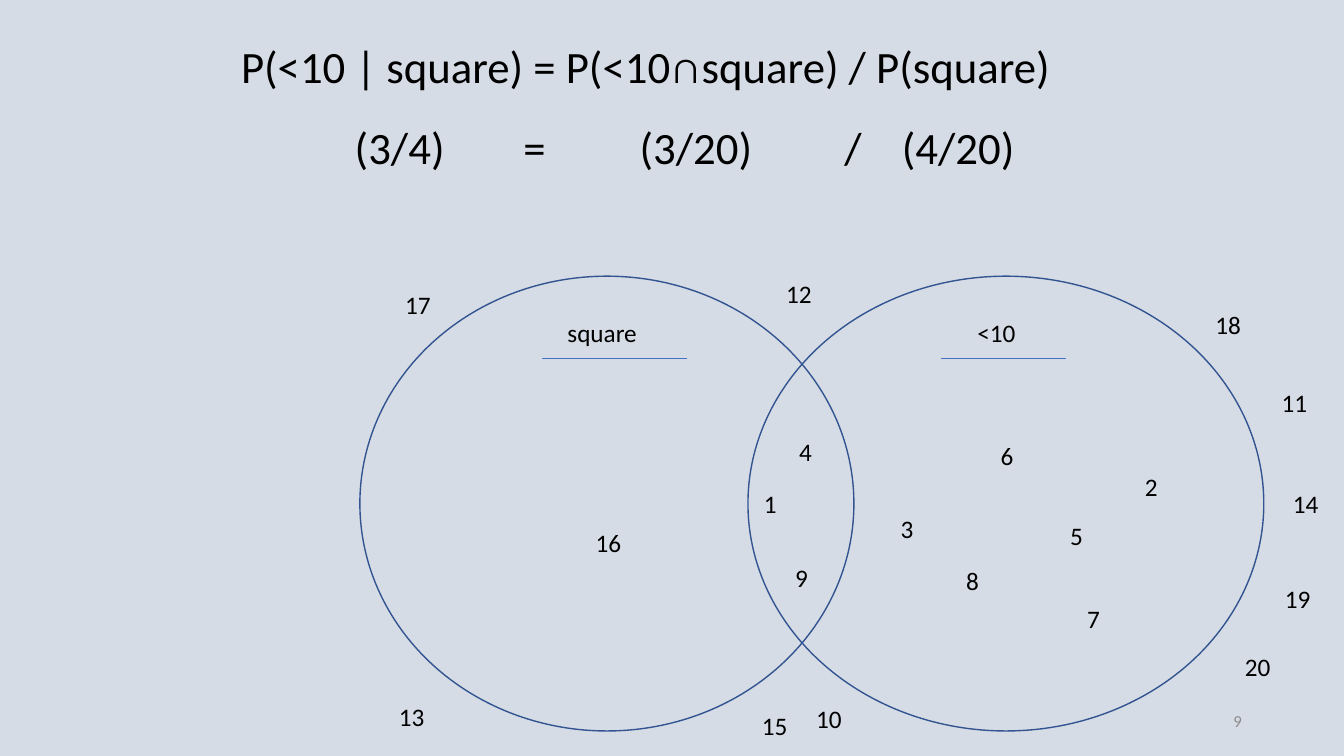
from dataclasses import dataclass

from lxml.etree import SubElement
from pptx import Presentation
from pptx.dml.color import RGBColor
from pptx.enum.shapes import MSO_CONNECTOR as Connector, MSO_SHAPE as Shape
from pptx.enum.text import MSO_ANCHOR as Anchor, MSO_AUTO_SIZE as AutoSize, PP_ALIGN as Align
from pptx.oxml.ns import qn
from pptx.util import Cm, Pt


@dataclass(frozen=True)
class Theme:
    font: str = "Calibri"
    background: str = "D6DCE5"
    ink: str = "000000"
    muted: str = "8C8C8C"
    circle: str = "325491"
    rule: str = "4472C4"
    formula_size: int = 32
    label_size: int = 18
    footer_size: int = 12


def write(frame, text, *, font, size, color, align=Align.LEFT,
          anchor=Anchor.TOP, wrap=True, autosize=AutoSize.SHAPE_TO_FIT_TEXT):
    frame.word_wrap = wrap
    frame.auto_size = autosize
    frame.vertical_anchor = anchor
    paragraph = frame.paragraphs[0]
    paragraph.alignment = align
    run = paragraph.add_run()
    run.text = text
    run.font.name = font
    run.font.size = Pt(size)
    run.font.color.rgb = RGBColor.from_string(color)
    return paragraph


class VennSlide:
    def __init__(self, deck, theme):
        self.theme = theme
        self.slide = deck.slides.add_slide(deck.slide_layouts[5])
        fill = self.slide.background.fill
        fill.solid()
        fill.fore_color.rgb = RGBColor.from_string(theme.background)

    def title(self, text, left, top, width, height):
        heading = self.slide.shapes.title
        heading.left, heading.top = Cm(left), Cm(top)
        heading.width, heading.height = Cm(width), Cm(height)
        write(heading.text_frame, text, font=self.theme.font,
              size=self.theme.formula_size, color=self.theme.ink, wrap=False)

    def text(self, text, left, top, width, height=1.02, *, size=None, color=None, **style):
        box = self.slide.shapes.add_textbox(Cm(left), Cm(top), Cm(width), Cm(height))
        return write(box.text_frame, text, font=self.theme.font,
                     size=size or self.theme.label_size,
                     color=color or self.theme.ink, **style)

    def tabbed_text(self, parts, stops, *place, **style):
        """Set the parts on one line, each after the first at its tab stop."""
        paragraph = self.text("\t".join(parts), *place, **style)
        tabs = SubElement(paragraph._p.get_or_add_pPr(), qn("a:tabLst"))
        for stop in stops:
            SubElement(tabs, qn("a:tab"), pos=str(Cm(stop)), algn="l")

    def circle(self, left, top, width, height):
        ellipse = self.slide.shapes.add_shape(
            Shape.OVAL, Cm(left), Cm(top), Cm(width), Cm(height))
        ellipse.shadow.inherit = False
        ellipse.fill.background()
        ellipse.line.color.rgb = RGBColor.from_string(self.theme.circle)
        ellipse.line.width = Pt(1)

    def rule(self, left, right, y):
        underline = self.slide.shapes.add_connector(
            Connector.STRAIGHT, Cm(left), Cm(y), Cm(right), Cm(y))
        underline.line.color.rgb = RGBColor.from_string(self.theme.rule)
        underline.line.width = Pt(0.5)
        SubElement(underline._element.spPr, qn("a:effectLst"))


CIRCLE_TOP, CIRCLE_HEIGHT = 6.96, 11.46
LABEL_TOP = 7.87

# Circle left and width, then set name with its left and width, then underline
SETS = [
    (9.07, 12.45, "square", 14.05, 2.69, (13.67, 17.32, 9.04)),
    (18.85, 13.0, "<10", 24.38, 1.63, (23.72, 26.87, 9.02)),
]

# Left and top of each number, in cm
NUMBERS = {
    1: (19.0, 12.17), 4: (19.89, 10.87), 9: (19.79, 14.05), 16: (14.76, 13.16),
    2: (28.6, 11.76), 3: (22.45, 12.8), 5: (26.72, 12.98), 7: (27.15, 15.09),
    8: (24.1, 14.12), 6: (24.97, 10.97), 10: (20.32, 17.6), 11: (32.05, 9.63),
    12: (19.56, 6.88), 13: (9.8, 17.55), 14: (32.33, 12.17), 15: (18.95, 17.78),
    17: (9.96, 7.16), 18: (30.38, 7.67), 20: (31.12, 16.28), 19: (32.13, 14.58),
}


def main():
    deck = Presentation()
    deck.slide_width, deck.slide_height = Cm(33.87), Cm(19.05)
    theme = Theme()
    venn = VennSlide(deck, theme)

    venn.title("P(<10 | square) = P(<10∩square) / P(square)", 5.82, 0.86, 21.82, 1.63)
    venn.tabbed_text(["(3/4)", "=", "(3/20)", "/", "(4/20)"], [4.25, 7.18, 12.34, 13.79],
                     8.69, 2.9, 17.65, 1.63, size=theme.formula_size, wrap=False)

    for left, width, name, name_left, name_width, underline in SETS:
        venn.circle(left, CIRCLE_TOP, width, CIRCLE_HEIGHT)
        venn.text(name, name_left, LABEL_TOP, name_width)
        venn.rule(*underline)
    for number, (left, top) in NUMBERS.items():
        venn.text(str(number), left, top, 0.84 if number < 10 else 1.19)

    venn.text("9", 23.93, 17.65, 7.62, size=theme.footer_size, color=theme.muted,
              align=Align.RIGHT, anchor=Anchor.MIDDLE, autosize=AutoSize.NONE)
    deck.save("out.pptx")


if __name__ == "__main__":
    main()
